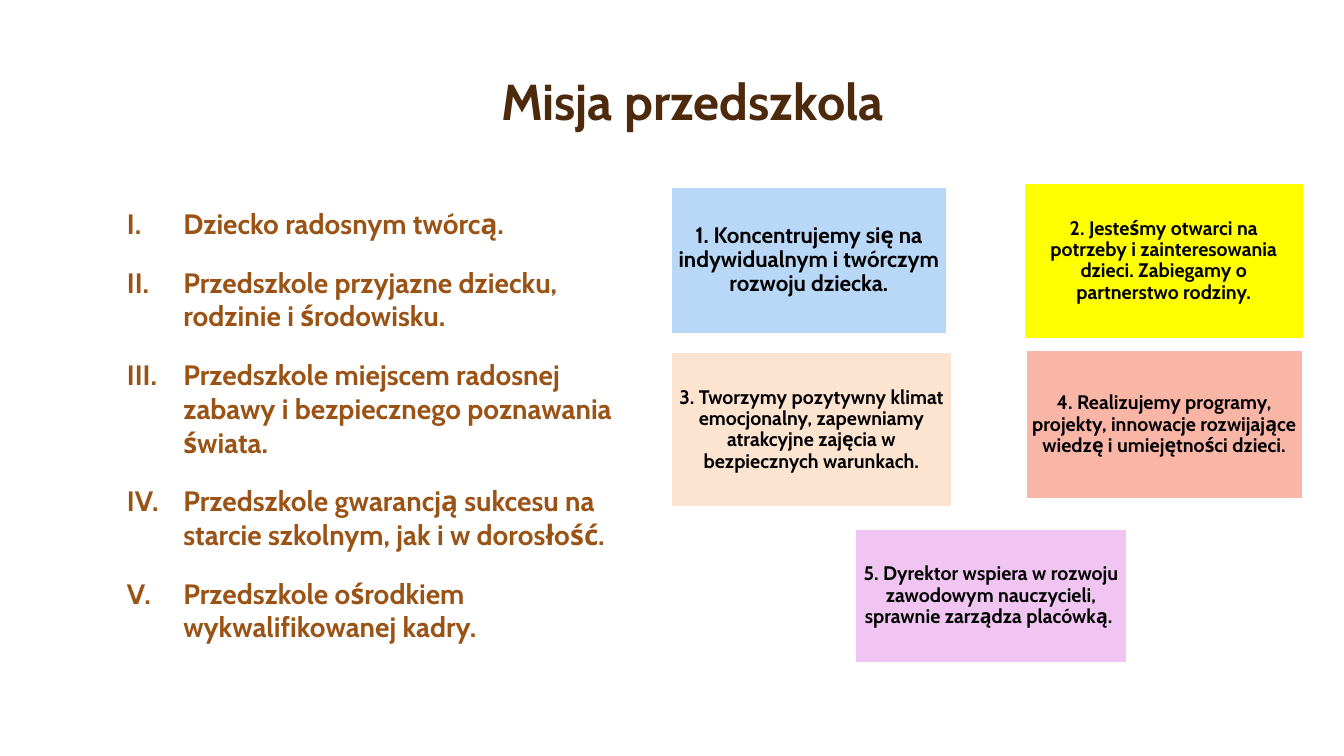
from lxml.etree import SubElement
from pptx import Presentation
from pptx.dml.color import RGBColor
from pptx.enum.shapes import MSO_SHAPE as Shape
from pptx.enum.text import MSO_ANCHOR as Anchor, PP_ALIGN as Align
from pptx.oxml.ns import qn
from pptx.util import Cm, Pt

FONT = "Cabin"
COLORS = {
    "title": "4D2A0B", "list": "9A5315", "text": "000000", "edge": "FFFFFF",
    "blue": "B9D8F7", "yellow": "FFFF00", "peach": "FDE4D1",
    "coral": "F9B5A5", "pink": "F0C5F2",
}
GOALS = [
    "Dziecko radosnym twórcą.",
    "Przedszkole przyjazne dziecku, rodzinie i środowisku.",
    "Przedszkole miejscem radosnej zabawy i bezpiecznego poznawania świata.",
    "Przedszkole gwarancją sukcesu na starcie szkolnym, jak i w dorosłość.",
    "Przedszkole ośrodkiem wykwalifikowanej kadry.",
]
CARDS = [
    ("1. Koncentrujemy się na indywidualnym i twórczym rozwoju dziecka.",
     "blue", 16, (16.92, 4.72, 6.93, 3.68)),
    ("2. Jesteśmy otwarci na potrzeby i zainteresowania dzieci. "
     "Zabiegamy o partnerstwo rodziny.",
     "yellow", 14, (25.81, 4.62, 7.04, 3.91)),
    ("3. Tworzymy pozytywny klimat emocjonalny, zapewniamy atrakcyjne "
     "zajęcia w bezpiecznych warunkach.",
     "peach", 14, (16.92, 8.89, 7.06, 3.89)),
    ("4. Realizujemy programy, projekty, innowacje rozwijające wiedzę "
     "i umiejętności dzieci.",
     "coral", 14, (25.86, 8.84, 6.96, 3.73)),
    ("5. Dyrektor wspiera w rozwoju zawodowym nauczycieli, sprawnie "
     "zarządza placówką. ",
     "pink", 14, (21.56, 13.34, 6.83, 3.35)),
]


def color(name):
    return RGBColor.from_string(COLORS[name])


def add_run(para, text, size, tone):
    run = para.add_run()
    run.text = text
    run.font.name = FONT
    run.font.size = Pt(size)
    run.font.bold = True
    run.font.color.rgb = color(tone)


def add_box(slide, area):
    frame = slide.shapes.add_textbox(*map(Cm, area)).text_frame
    frame.word_wrap = True
    return frame


def center(frame, text, size, tone):
    para = frame.paragraphs[0]
    para.alignment = Align.CENTER
    para.line_spacing = 0.9
    add_run(para, text, size, tone)


def add_title(slide, text, area):
    frame = add_box(slide, area)
    frame.vertical_anchor = Anchor.BOTTOM
    center(frame, text, 36, "title")


def add_list(slide, items, area):
    frame = add_box(slide, area)
    for i, item in enumerate(items):
        para = frame.add_paragraph() if i else frame.paragraphs[0]
        if i:
            para.space_before = Pt(18)
        props = para._p.get_or_add_pPr()
        props.set("marL", str(Cm(1.42)))
        props.set("indent", str(-Cm(1.42)))
        SubElement(props, qn("a:buFont"), typeface="+mj-lt")
        SubElement(props, qn("a:buAutoNum"), type="romanUcPeriod")
        add_run(para, item, 20, "list")


def add_card(slide, text, fill, size, area):
    card = slide.shapes.add_shape(Shape.RECTANGLE, *map(Cm, area))
    card.shadow.inherit = False
    card.fill.solid()
    card.fill.fore_color.rgb = color(fill)
    card.line.color.rgb = color("edge")
    card.line.width = Pt(1)
    frame = card.text_frame
    frame.word_wrap = True
    frame.vertical_anchor = Anchor.MIDDLE
    pad = Cm(size / 100)
    frame.margin_left = frame.margin_right = pad
    frame.margin_top = frame.margin_bottom = pad
    center(frame, text, size, "text")


def main():
    deck = Presentation()
    deck.slide_width, deck.slide_height = Cm(33.87), Cm(19.05)
    slide = deck.slides.add_slide(deck.slide_layouts[6])
    add_title(slide, "Misja przedszkola", (3.48, 1.24, 27.94, 2.21))
    add_list(slide, GOALS, (2.95, 5.08, 13.77, 12.34))
    for card in CARDS:
        add_card(slide, *card)
    deck.save("out.pptx")


if __name__ == "__main__":
    main()
